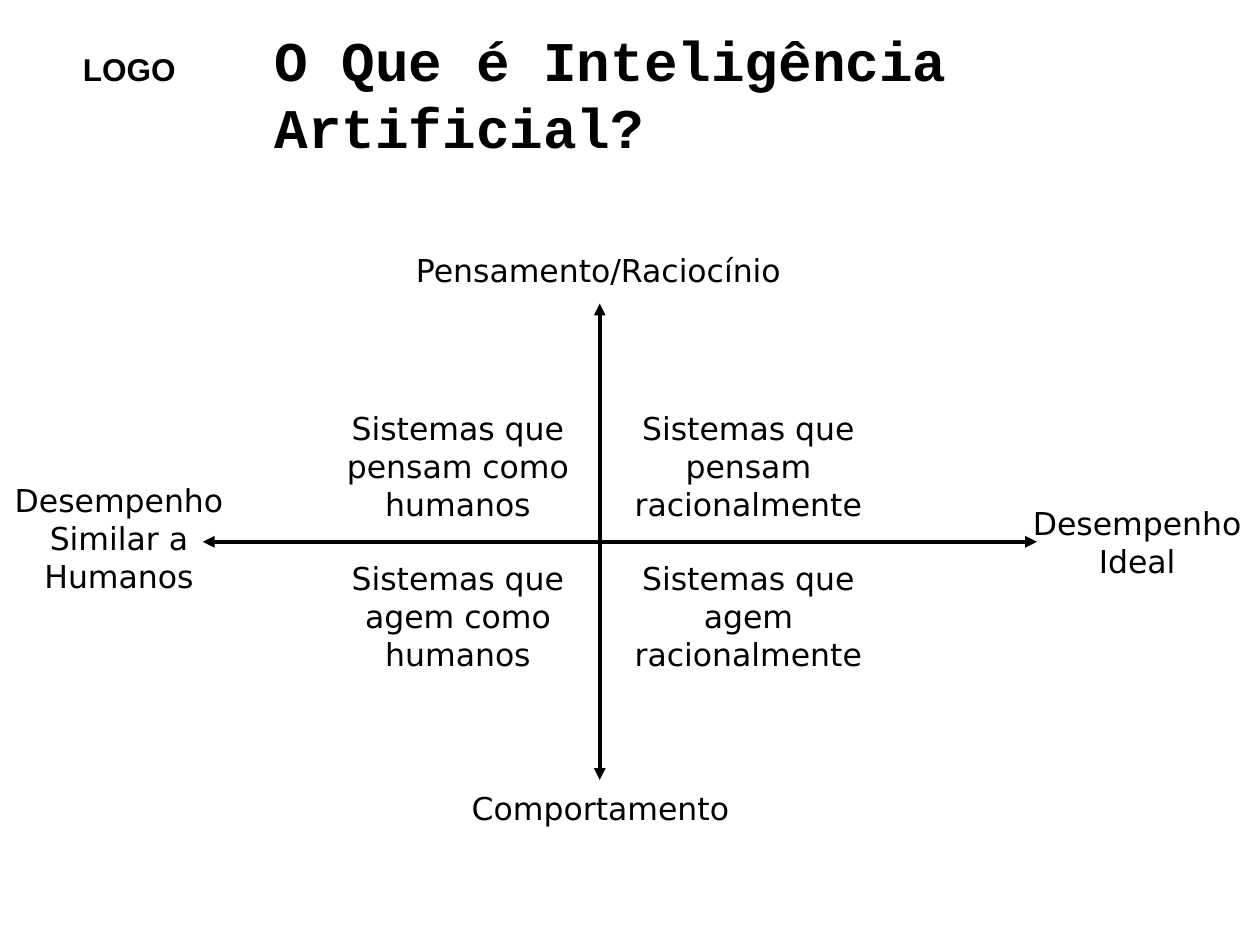
from lxml import etree
from pptx import Presentation
from pptx.dml.color import RGBColor
from pptx.enum.shapes import MSO_CONNECTOR
from pptx.enum.text import MSO_ANCHOR, MSO_AUTO_SIZE, PP_ALIGN
from pptx.oxml.ns import qn
from pptx.util import Inches, Pt

BLACK = RGBColor(0x00, 0x00, 0x00)

# Content: text and box (left, top, width, height) in inches
TITLE = ("O Que é Inteligência Artificial?", (2.08, 0.25, 7.42, 0.97))
LOGO = ("LOGO", (0.56, 0.35, 0.94, 0.4))
VERTICAL_ENDS = [
    ("Pensamento/Raciocínio", (3.19, 1.94, 3.12, 0.4)),
    ("Comportamento", (3.64, 6.21, 2.25, 0.4)),
]
HORIZONTAL_ENDS = [
    ("Desempenho Similar a Humanos", (-0.04, 3.77, 1.97, 1.01)),
    ("Desempenho Ideal", (8.04, 3.95, 1.97, 0.71)),
]
QUADRANTS = [
    ["Sistemas que pensam como humanos", "Sistemas que pensam racionalmente"],
    ["Sistemas que agem como humanos", "Sistemas que agem racionalmente"],
]
QUADRANT_TOPS = (3.2, 4.39)
QUADRANT_COLUMNS = ((3.635, 1.97), (5.94, 2.1))  # centre, width
QUADRANT_HEIGHT = 1.01

# Axes cross at this point
CENTER_X, CENTER_Y = 4.76, 4.3
AXES = [
    (1.61, CENTER_Y, 8.23, CENTER_Y),
    (CENTER_X, 2.41, CENTER_X, 6.19),
]


def add_text(slide, text, box, font="DejaVu Sans", size=18, bold=False,
             align=PP_ALIGN.CENTER, anchor=MSO_ANCHOR.TOP, wrap=True, grow=True):
    tf = slide.shapes.add_textbox(*map(Inches, box)).text_frame
    tf.word_wrap = wrap
    tf.auto_size = MSO_AUTO_SIZE.SHAPE_TO_FIT_TEXT if grow else MSO_AUTO_SIZE.NONE
    tf.vertical_anchor = anchor
    p = tf.paragraphs[0]
    p.alignment = align
    r = p.add_run()
    r.text = text
    r.font.name = font
    r.font.size = Pt(size)
    r.font.bold = bold
    r.font.color.rgb = BLACK


def add_axis(slide, ends):
    line = slide.shapes.add_connector(MSO_CONNECTOR.STRAIGHT, *map(Inches, ends))
    line.line.color.rgb = BLACK
    line.line.width = Pt(2.25)
    ln = line.line._get_or_add_ln()
    for end in ("a:headEnd", "a:tailEnd"):
        etree.SubElement(ln, qn(end), type="triangle")
    etree.SubElement(line._element.spPr, qn("a:effectLst"))


def main():
    prs = Presentation()
    prs.slide_width, prs.slide_height = Inches(10), Inches(7.5)
    slide = prs.slides.add_slide(prs.slide_layouts[6])

    # Header
    add_text(slide, *LOGO, font="Arial", bold=True, align=PP_ALIGN.LEFT, wrap=False)
    add_text(slide, *TITLE, font="Courier New", size=32, bold=True,
             align=PP_ALIGN.LEFT, anchor=MSO_ANCHOR.MIDDLE, grow=False)

    # Axes and their end labels
    for ends in AXES:
        add_axis(slide, ends)
    for text, box in VERTICAL_ENDS:
        add_text(slide, text, box, wrap=False)
    for text, box in HORIZONTAL_ENDS:
        add_text(slide, text, box)

    # Quadrants
    for top, row in zip(QUADRANT_TOPS, QUADRANTS):
        for (center, width), text in zip(QUADRANT_COLUMNS, row):
            add_text(slide, text, (center - width / 2, top, width, QUADRANT_HEIGHT))

    prs.save("out.pptx")


if __name__ == "__main__":
    main()
